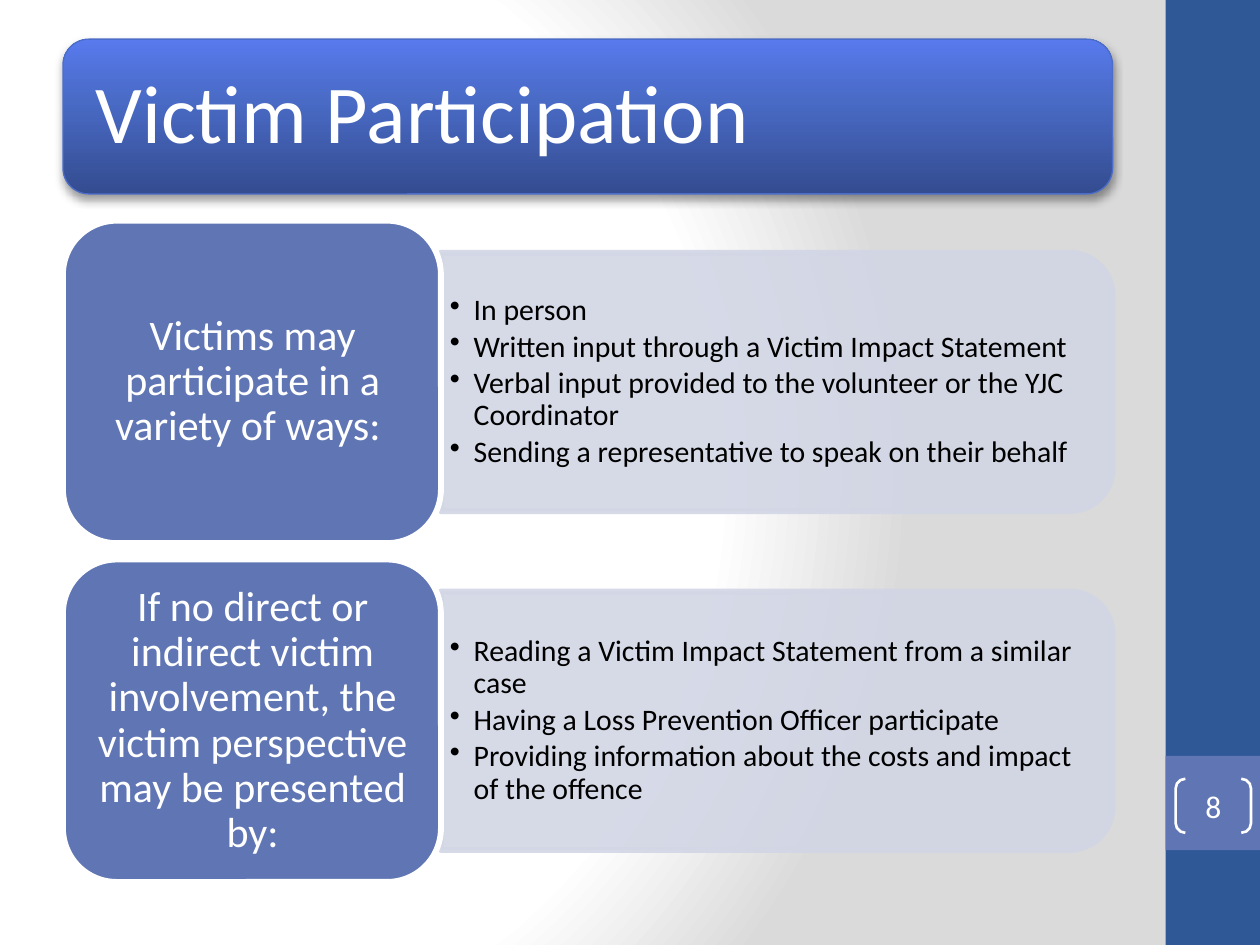
import pptx
import pptx.dml.color
import pptx.enum.shapes
import pptx.enum.text
import pptx.oxml
import pptx.oxml.ns
import pptx.util

Cm, Pt = pptx.util.Cm, pptx.util.Pt
SHAPE = pptx.enum.shapes.MSO_SHAPE
ALIGN = pptx.enum.text.PP_ALIGN
qn = pptx.oxml.ns.qn

COLORS = {
    "white": "FFFFFF", "black": "000000", "gray": "DADADA",
    "band": "2F5897", "label": "6076B4", "pane": "D2D6E5",
    "title_dark": "344C90", "title_mid": "496AC5",
    "title_light": "587AED", "title_line": "4B6CC9",
}

ROWS = [
    ("Victims may participate in a variety of ways: ",
     ["In person",
      "Written input through a Victim Impact Statement",
      "Verbal input provided to the volunteer or the YJC Coordinator",
      "Sending a representative to speak on their behalf"]),
    ("If no direct or indirect victim involvement, the victim perspective "
     "may be presented by:",
     ["Reading a Victim Impact Statement from a similar case",
      "Having a Loss Prevention Officer participate",
      "Providing information about the costs and impact of the offence"]),
]


def rgb(name):
    return pptx.dml.color.RGBColor.from_string(COLORS[name])


def xml(tag, body="", **attrs):
    """Make one DrawingML element."""
    attrs = " ".join(f'{k}="{v}"' for k, v in attrs.items())
    return pptx.oxml.parse_xml(
        f'<a:{tag} {pptx.oxml.ns.nsdecls("a")} {attrs}>{body}</a:{tag}>')


class Deck:
    font = "Calibri"

    def __init__(self):
        self.prs = pptx.Presentation()
        self.prs.slide_width, self.prs.slide_height = Cm(25.4), Cm(19.05)
        self.s = self.prs.slides.add_slide(self.prs.slide_layouts[6])

    def gradient(self, fill, parent, stops, direction):
        """Replace the default gradient with the given stops and direction."""
        fill.gradient()
        old = parent.find(qn("a:gradFill"))
        gs = "".join(f'<a:gs pos="{pos * 1000}"><a:srgbClr val="{COLORS[c]}"/></a:gs>'
                     for pos, c in stops)
        parent.replace(old, xml("gradFill", f"<a:gsLst>{gs}</a:gsLst>{direction}",
                                rotWithShape=1))

    def background(self, stops, direction):
        fill = self.s.background.fill
        fill.solid()
        parent = next(self.s.element.iter(qn("p:bgPr")))
        self.gradient(fill, parent, stops, direction)

    def shape(self, kind, box, fill=None, line=None, width=0.75, alpha=None, turn=0):
        sp = self.s.shapes.add_shape(kind, *map(Cm, box))
        sp.shadow.inherit = False
        sp.rotation = turn
        for fmt, color in ((sp.fill, fill), (sp.line.fill, line)):
            if color:
                fmt.solid()
                fmt.fore_color.rgb = rgb(color)
            else:
                fmt.background()
        if line:
            sp.line.width = Pt(width)
        if alpha:
            for clr in sp._element.spPr.iter(qn("a:srgbClr")):
                clr.append(xml("alpha", val=alpha * 1000))
        return sp

    def text(self, box, lines, size, **style):
        tb = self.s.shapes.add_textbox(*map(Cm, box))
        self.set_lines(tb.text_frame, lines, size, **style)

    def set_lines(self, tf, lines, size, color="white", align=ALIGN.LEFT,
                  inset=(0.25, 0.13), after=35, spacing=0.9, bullet=False):
        x, y = map(Cm, inset)
        frame = {"word_wrap": True,
                 "vertical_anchor": pptx.enum.text.MSO_ANCHOR.MIDDLE,
                 "margin_left": x, "margin_right": x,
                 "margin_top": y, "margin_bottom": y}
        for name, value in frame.items():
            setattr(tf, name, value)
        for i, line in enumerate(lines):
            p = tf.add_paragraph() if i else tf.paragraphs[0]
            para = {"alignment": align, "line_spacing": spacing,
                    "level": int(bullet)}
            for name, value in para.items():
                setattr(p, name, value)
            pPr = p._p.get_or_add_pPr()
            pPr.append(xml("spcAft", f'<a:spcPct val="{after * 1000}"/>'))
            if bullet:
                pPr.set("marL", str(Cm(0.48)))
                pPr.set("indent", str(Cm(-0.48)))
                pPr.append(xml("buChar", char="•"))
            r = p.add_run()
            r.text = line
            for name, value in {"name": self.font, "size": Pt(size)}.items():
                setattr(r.font, name, value)
            r.font.color.rgb = rgb(color)

    def title(self, words):
        sp = self.shape(SHAPE.ROUNDED_RECTANGLE, (1.27, 0.79, 21.16, 3.12),
                        "title_mid", "title_line")
        spPr = sp._element.spPr
        self.gradient(sp.fill, spPr,
                      [(0, "title_dark"), (60, "title_mid"), (100, "title_light")],
                      '<a:lin ang="16200000" scaled="0"/>')
        shadow = xml("outerShdw", f'<a:srgbClr val="{COLORS["black"]}">'
                     '<a:alpha val="40000"/></a:srgbClr>', blurRad=Pt(5.2),
                     dist=Pt(3), dir=5400000, rotWithShape=0)
        spPr.find(qn("a:effectLst")).append(shadow)
        self.text((1.42, 0.94, 20.85, 2.82), [words], 47, inset=(0.51, 0.51))

    def row(self, mid, label, points):
        """Draw a label and its pane of points, centred on the height mid."""
        # Pane: a tall shape turned on its side
        w, h = 5.21, 13.54
        self.shape(SHAPE.ROUND_2_SAME_RECTANGLE,
                   (15.66 - w / 2, mid - h / 2, w, h),
                   "pane", "pane", 3.35, alpha=90, turn=90)
        self.text((8.89, mid - 2.35, 13.28, 4.7), points, 17, color="black",
                  inset=(0.18, 0.1), after=15, bullet=True)
        # Label
        self.shape(SHAPE.ROUNDED_RECTANGLE, (1.27, mid - 3.25, 7.62, 6.5),
                   "label", "white", 3.35)
        self.text((1.6, mid - 2.93, 6.99, 5.86), [label], 24, align=ALIGN.CENTER)

    def page_number(self, number):
        sp = self.shape(SHAPE.DOUBLE_BRACKET, (23.7, 15.7, 1.52, 1.09),
                        line="white", width=1.5)
        sp.adjustments[0] = 0.18
        self.set_lines(sp.text_frame, [number], 18, align=ALIGN.CENTER,
                       inset=(0, 0), after=0, spacing=1.0)


def main():
    deck = Deck()
    deck.background([(0, "white"), (75, "white"), (100, "gray")],
                    '<a:path path="circle"><a:fillToRect l="20000" t="50000" '
                    'r="100000" b="50000"/></a:path>')
    # Side band
    deck.shape(SHAPE.RECTANGLE, (23.5, 0, 1.9, 19.05), "band")
    deck.shape(SHAPE.RECTANGLE, (23.5, 15.24, 1.9, 1.9), "label")
    # Content
    deck.title("Victim Participation")
    for i, (label, points) in enumerate(ROWS):
        deck.row(7.7 + 6.83 * i, label, points)
    deck.page_number("8")
    deck.prs.save("out.pptx")


if __name__ == "__main__":
    main()
